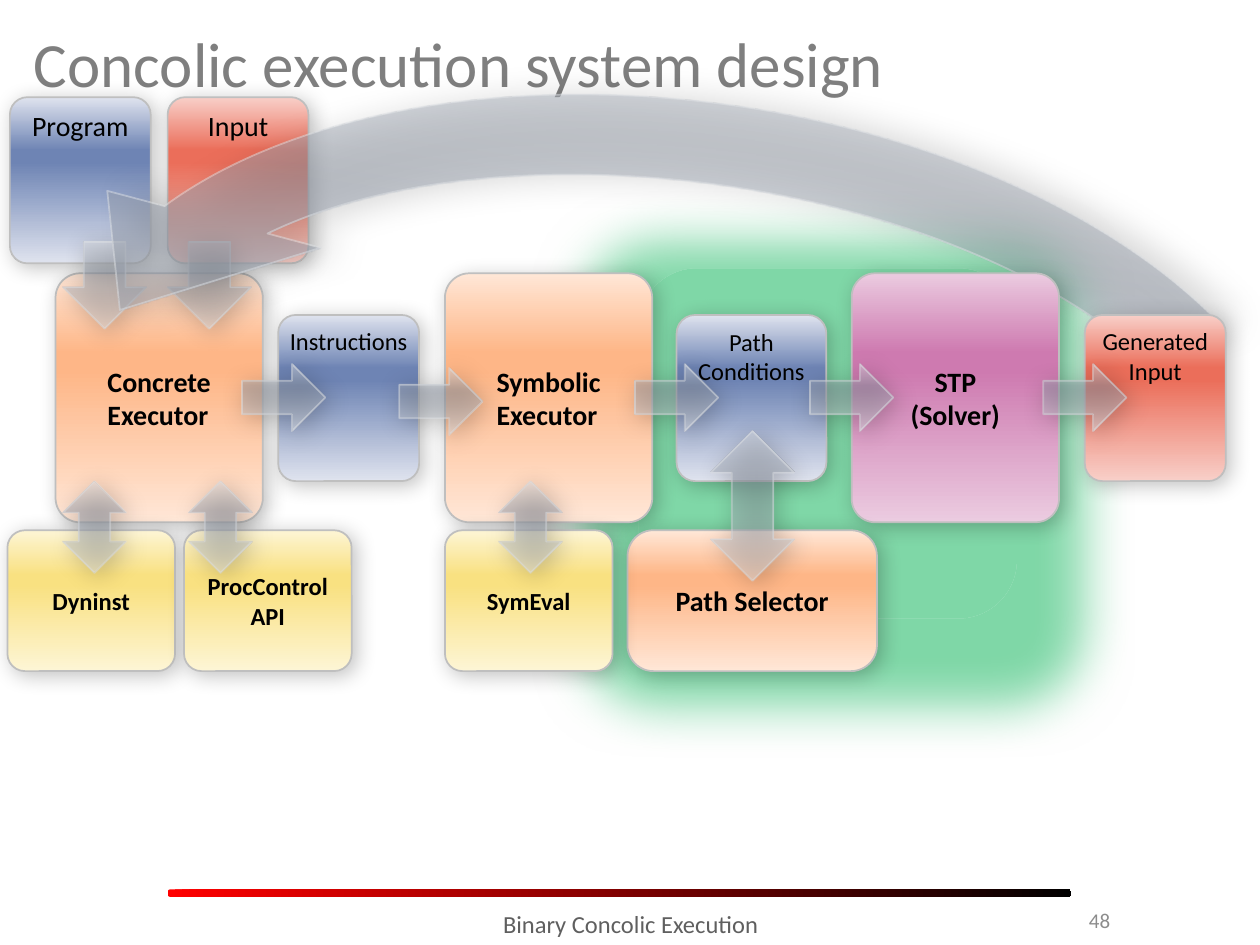
from lxml.etree import SubElement
from pptx import Presentation
from pptx.dml.color import RGBColor
from pptx.enum.shapes import MSO_SHAPE as Shape
from pptx.enum.text import MSO_ANCHOR as Anchor, PP_ALIGN as Align
from pptx.oxml.ns import qn
from pptx.util import Cm, Pt

ORANGE = ("FFE7D7", "FEB687")
BLUE = ("DFE3EE", "6E84B4")
RED = ("F8CFC8", "EB6E5A")
PURPLE = ("EBCBE0", "CE7AB0")
YELLOW = ("FDF5D5", "F9E181")
GREY = ("DCDFE3", "969EAB")


def color(value):
    return RGBColor.from_string(value)


def add_element(parent, tag, **attributes):
    return SubElement(parent, qn(tag), {k: str(v) for k, v in attributes.items()})


def add_alpha(parent, percent):
    if percent < 100:
        add_element(parent, "a:alpha", val=percent * 1000)


def add_color(parent, value, alpha=100):
    add_alpha(add_element(parent, "a:srgbClr", val=color(value)), alpha)


class Diagram:
    font_name = "Calibri"
    box_shadow = ("000000", 23, 12, 3, 45)
    arrow_shadow = ("000000", 40, 14, 3, 45)

    def __init__(self, slide):
        self.slide = slide

    def format_text(self, frame, text, size, text_color, align=None, bold=None):
        frame.word_wrap = True
        frame.text = text
        paragraph = frame.paragraphs[0]
        paragraph.alignment = align
        font = paragraph.font
        font.name, font.size, font.bold = self.font_name, Pt(size), bold
        font.color.rgb = color(text_color)

    def title(self, text, *bounds):
        shape = self.slide.shapes.title
        shape.left, shape.top, shape.width, shape.height = map(Cm, bounds)
        frame = shape.text_frame
        frame.vertical_anchor = Anchor.MIDDLE
        self.format_text(frame, text, 36, "7F7F7F", Align.LEFT)

    def label(self, text, bounds, size, text_color, align, anchor):
        frame = self.slide.shapes.add_textbox(*map(Cm, bounds)).text_frame
        frame.vertical_anchor = anchor
        self.format_text(frame, text, size, text_color, align)

    def shape(self, kind, bounds, fill, line=None, alpha=100, angle=90,
              shadow=None, scale=100):
        shape = self.slide.shapes.add_shape(kind, *map(Cm, bounds))
        properties = shape._element.spPr
        if isinstance(fill, str):
            shape.fill.solid()
            shape.fill.fore_color.rgb = color(fill)
            add_alpha(properties.find(".//" + qn("a:srgbClr")), alpha)
        else:
            gradient = add_element(properties, "a:gradFill", rotWithShape=1)
            stops = add_element(gradient, "a:gsLst")
            for position, value in fill:
                stop = add_element(stops, "a:gs", pos=position * 1000)
                add_color(stop, value, alpha)
            add_element(gradient, "a:lin", ang=angle * 60000, scaled=0)
        if line:
            shape.line.width = Pt(1)
            shape.line.color.rgb = color(line)
            add_alpha(shape.line._ln.find(".//" + qn("a:srgbClr")), alpha)
        else:
            shape.line.fill.background()
        shape.shadow.inherit = False
        if shadow:
            value, opacity, blur, distance, direction = shadow
            effects = properties.find(qn("a:effectLst"))
            outer = add_element(effects, "a:outerShdw", blurRad=Pt(blur),
                                dist=Pt(distance), dir=direction * 60000,
                                sx=scale * 1000, sy=scale * 1000,
                                algn="tl", rotWithShape=0)
            add_color(outer, value, opacity)
        return shape

    def banded(self, colors):
        edge, band = colors
        return [(0, edge), (32, band), (39, band), (100, edge)]

    def box(self, text, bounds, colors, corner=0.124, size=16, bold=None,
            align=Align.CENTER, anchor=Anchor.TOP, tight=False):
        shape = self.shape(Shape.ROUNDED_RECTANGLE, bounds, self.banded(colors),
                           "BFBFBF", shadow=self.box_shadow)
        shape.adjustments[0] = corner
        frame = shape.text_frame
        frame.vertical_anchor = anchor
        if tight:
            frame.margin_left = frame.margin_right = 0
        self.format_text(frame, text, size, "000000", align, bold)
        if align == Align.LEFT:
            frame._txBody.bodyPr.set("anchorCtr", "1")

    def engine(self, text, bounds, colors, corner=0.118, align=Align.LEFT):
        self.box(text, bounds, colors, corner, 16, True, align, Anchor.MIDDLE)

    def data(self, text, left, top, colors, width=2.84, size=14, tight=False):
        self.box(text, (left, top, width, 3.35), colors, size=size, tight=tight)

    def library(self, text, left):
        self.box(text, (left, 10.69, 3.38, 2.84), YELLOW, size=14, bold=True,
                 anchor=Anchor.MIDDLE, tight=True)

    def arrow(self, kind, *bounds, shadow=arrow_shadow):
        return self.shape(kind, bounds, self.banded(GREY), GREY[0], alpha=50,
                          shadow=shadow)

    def feedback_arrow(self, *bounds):
        shape = self.arrow(Shape.CIRCULAR_ARROW, *bounds,
                           shadow=("000000", 31, 21, 13, 4))
        shape.rotation = 8.1
        shape._element.spPr.xfrm.set("flipH", "1")
        thickness, head_angle, end, start, head_width = 0.094, 7.35, 204.56, 121.58, 0.129
        for index, value in enumerate((thickness, head_angle, end, start, head_width)):
            shape.adjustments[index] = value


def main():
    presentation = Presentation()
    presentation.slide_width, presentation.slide_height = Cm(25.4), Cm(19.05)
    diagram = Diagram(presentation.slides.add_slide(presentation.slide_layouts[5]))

    rule = diagram.shape(Shape.ROUNDED_RECTANGLE, (3.38, 17.93, 18.21, 0.15),
                         [(0, "FF0000"), (100, "000000")], angle=0)
    rule.adjustments[0] = 0.33
    solver_area = (12.88, 5.41, 7.62, 7.06)
    diagram.shape(Shape.ROUNDED_RECTANGLE, solver_area, "FFFFFF",
                  shadow=("00B050", 50, 30, 36, 205), scale=133)
    diagram.shape(Shape.ROUNDED_RECTANGLE, solver_area, "00B050", alpha=50)

    diagram.title("Concolic execution system design", 0.43, 0.2, 24.56, 2.11)
    diagram.label("48", (19.25, 18.03, 3.38, 1.02), 12, "8C8C8C",
                  Align.RIGHT, Anchor.MIDDLE)
    diagram.label("Binary Concolic Execution", (6.15, 18.21, 13.13, 0.84), 14,
                  "5F5F5F", Align.CENTER, Anchor.TOP)

    diagram.engine("Concrete Executor", (1.12, 5.51, 4.18, 5.02), ORANGE)
    diagram.data("Program", 0.2, 1.96, BLUE, size=16)
    diagram.data("Input", 3.38, 1.96, RED, size=16)
    for left in (1.27, 3.38):
        diagram.arrow(Shape.DOWN_ARROW, left, 4.88, 1.68, 1.75)
    diagram.feedback_arrow(-0.41, 0.64, 28.37, 17.27)

    diagram.data("Instructions", 5.61, 6.35, BLUE, tight=True)
    diagram.data("Generated Input", 21.87, 6.35, RED, tight=True)
    diagram.engine("Symbolic Executor", (8.97, 5.51, 4.18, 5.02), ORANGE)
    diagram.engine("STP\v(Solver)", (17.17, 5.51, 4.18, 5.02), PURPLE, 0.113,
                   Align.CENTER)
    diagram.data("Path Conditions", 13.64, 6.35, BLUE, width=3.02)
    diagram.engine("Path Selector", (12.65, 10.69, 5.03, 2.84), ORANGE, 0.184)

    for left, top in ((8.05, 7.42), (12.8, 7.34), (16.33, 7.34), (21.03, 7.34),
                      (4.88, 7.34)):
        diagram.arrow(Shape.RIGHT_ARROW, left, top, 1.68, 1.35)
    diagram.arrow(Shape.UP_DOWN_ARROW, 14.33, 8.69, 1.68, 3.02)
    for text, left in (("SymEval", 8.97), ("Dyninst", 0.15),
                       ("ProcControl\vAPI", 3.71)):
        diagram.library(text, left)
    for left in (10.06, 1.27, 3.81):
        diagram.arrow(Shape.UP_DOWN_ARROW, left, 9.7, 1.27, 1.85)

    presentation.save("out.pptx")


if __name__ == "__main__":
    main()
